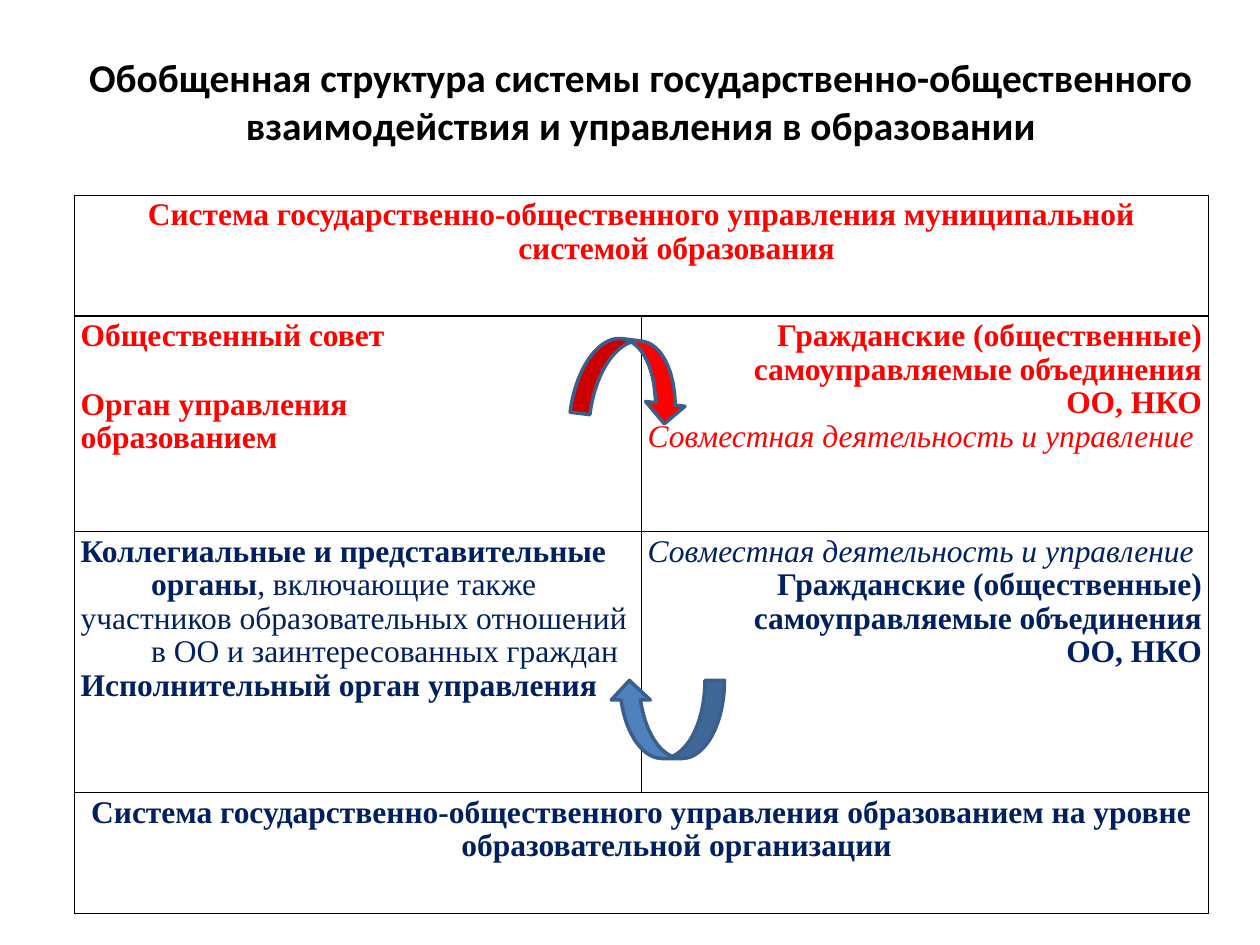
"""Build the slide on state and public governance in education."""
from lxml.etree import SubElement
from pptx import Presentation
from pptx.dml.color import RGBColor
from pptx.enum.shapes import MSO_SHAPE
from pptx.enum.text import MSO_ANCHOR, MSO_AUTO_SIZE, PP_ALIGN
from pptx.oxml.ns import qn
from pptx.util import Inches, Pt

RED, NAVY = "FF0000", "002060"
LEFT, CENTER, RIGHT = PP_ALIGN.LEFT, PP_ALIGN.CENTER, PP_ALIGN.RIGHT
PLAIN = {"bold": False, "italic": False}
BOLD = {"bold": True, "italic": False}
ITALIC = {"bold": False, "italic": True}


def color(hex_value):
    return RGBColor.from_string(hex_value)


def add_run(paragraph, text, hex_value, font_values):
    run = paragraph.add_run()
    run.text = text
    run.font.color.rgb = color(hex_value)
    for name, value in font_values.items():
        setattr(run.font, name, value)


presentation = Presentation()
presentation.slide_width, presentation.slide_height = Inches(10), Inches(7.5)
slide = presentation.slides.add_slide(presentation.slide_layouts[5])

title = slide.shapes.title
title_box = {"left": 0.59, "top": 0.29, "width": 9, "height": 1.02}
for name, value in title_box.items():
    setattr(title, name, Inches(value))
title.text_frame.auto_size = MSO_AUTO_SIZE.NONE
title.text_frame.vertical_anchor = MSO_ANCHOR.MIDDLE
title_paragraph = title.text_frame.paragraphs[0]
title_paragraph.alignment = CENTER
add_run(
    title_paragraph,
    "Обобщенная структура системы государственно-общественного взаимодействия и управления в образовании",
    "000000",
    {"name": "Calibri", "size": Pt(22.5), "bold": True},
)

associations = [
    (RIGHT, 0, [("Гражданские (общественные) самоуправляемые объединения", BOLD)]),
    (RIGHT, 0, [("ОО, НКО", BOLD)]),
]
joint_work = [(LEFT, 0, [("Совместная деятельность и управление", ITALIC)])]
cells = {
    (0, 0): (RED, [
        (CENTER, 0, [("Система государственно-общественного управления муниципальной системой образования", BOLD)]),
    ]),
    (1, 0): (RED, [
        (LEFT, 0, [("Общественный совет", BOLD)]),
        (LEFT, 20, [("Орган управления", BOLD)]),
        (LEFT, 0, [("образованием", BOLD)]),
    ]),
    (1, 1): (RED, associations + joint_work),
    (2, 0): (NAVY, [
        (LEFT, 0, [("Коллегиальные и представительные органы", BOLD), (", включающие также", PLAIN)]),
        (LEFT, 0, [("участников образовательных отношений в ОО и заинтересованных граждан", PLAIN)]),
        (LEFT, 0, [("Исполнительный орган управления", BOLD)]),
    ]),
    (2, 1): (NAVY, joint_work + associations),
    (3, 0): (NAVY, [
        (CENTER, 0, [("Система государственно-общественного управления образованием на уровне образовательной организации", BOLD)]),
    ]),
}

row_heights = [0.96, 1.71, 2.07, 0.96]
table = slide.shapes.add_table(
    4, 2, Inches(0.59), Inches(1.55), Inches(9), Inches(sum(row_heights))
).table
table.first_row = table.horz_banding = False
for row, height in zip(table.rows, row_heights):
    row.height = Inches(height)
for row_index in (0, 3):
    table.cell(row_index, 0).merge(table.cell(row_index, 1))

margins = {"margin_left": 0.05, "margin_right": 0.05, "margin_top": 0.03, "margin_bottom": 0.03}
for cell in table.iter_cells():
    for name, value in margins.items():
        setattr(cell, name, Inches(value))
    properties = cell._tc.get_or_add_tcPr()
    for side in ("a:lnL", "a:lnR", "a:lnT", "a:lnB"):
        border = SubElement(properties, qn(side), w=str(Pt(1)))
        border_fill = SubElement(border, qn("a:solidFill"))
        SubElement(border_fill, qn("a:srgbClr"), val="000000")
    cell.fill.background()

for position, (hex_value, paragraphs) in cells.items():
    text_frame = table.cell(*position).text_frame
    for index, (alignment, space_before, runs) in enumerate(paragraphs):
        paragraph = text_frame.add_paragraph() if index else text_frame.paragraphs[0]
        paragraph_values = {"alignment": alignment, "space_before": Pt(space_before), "line_spacing": 0.96}
        for name, value in paragraph_values.items():
            setattr(paragraph, name, value)
        indents = paragraph._p.get_or_add_pPr()
        indents.set("marL", str(Inches(0.56)))
        indents.set("indent", str(-Inches(0.56)))
        for text, style in runs:
            add_run(paragraph, text, hex_value, {"name": "Times New Roman", "size": Pt(18), **style})

arrows = [
    (4.56, 2.7, 0.63, 7, RED),
    (4.84, 5.4, 0.62, 180, "4F81BD"),
]
for left, top, height, rotation, fill in arrows:
    arrow = slide.shapes.add_shape(
        MSO_SHAPE.CURVED_DOWN_ARROW, Inches(left), Inches(top), Inches(0.91), Inches(height)
    )
    arrow.rotation = rotation
    arrow.shadow.inherit = False
    arrow.fill.solid()
    arrow.fill.fore_color.rgb = color(fill)
    arrow.line.color.rgb = color("3A5F8C")
    arrow.line.width = Pt(2)

presentation.save("out.pptx")
